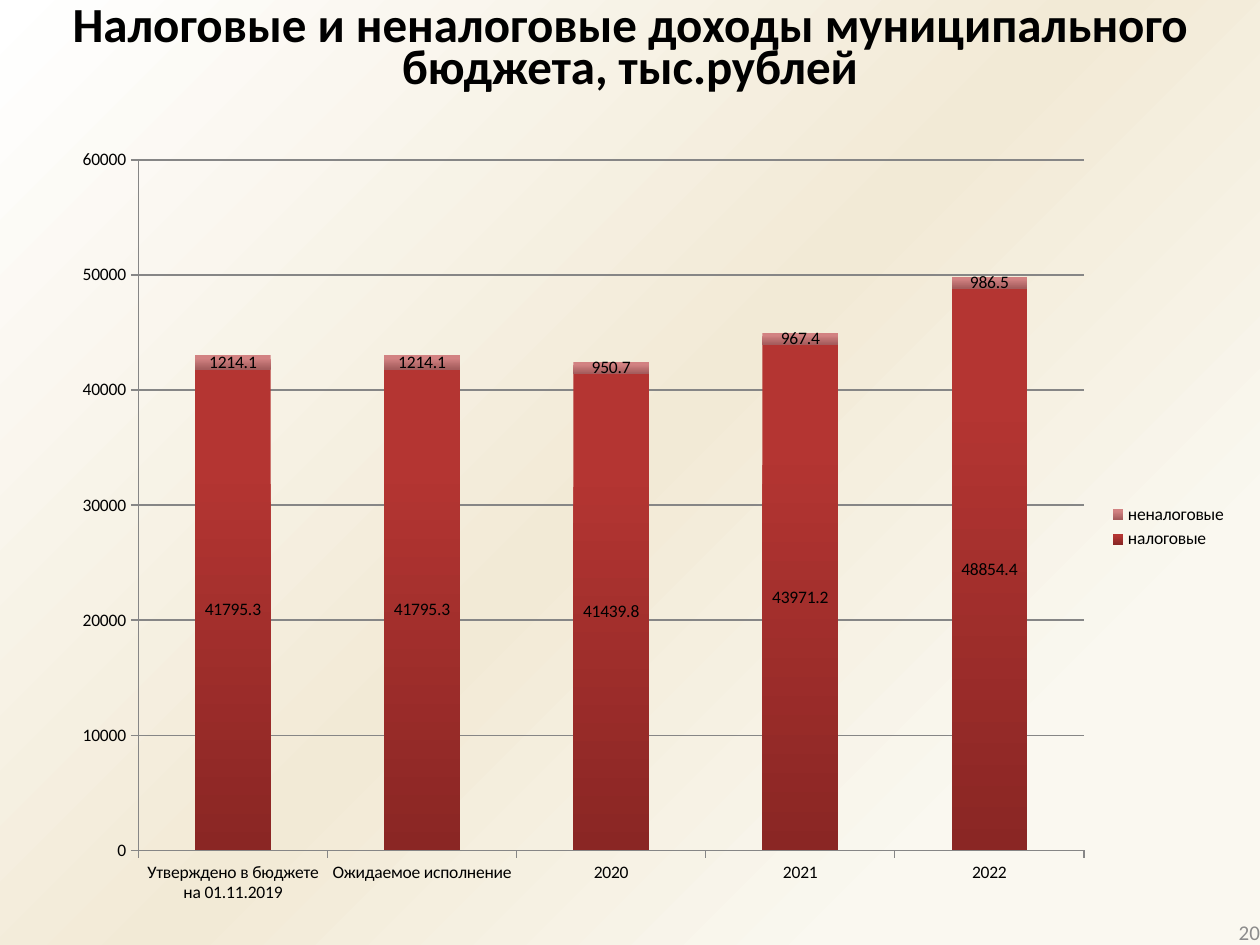
from pptx import Presentation, util as u
from pptx.chart.data import CategoryChartData
from pptx.dml.color import RGBColor
from pptx.enum import chart as ec, text as et
from pptx.oxml import parse_xml
from pptx.oxml.ns import nsdecls, qn

Inches, Pt = u.Inches, u.Pt
BLACK = RGBColor(0, 0, 0)
GREY = RGBColor(0x8C, 0x8C, 0x8C)
AXIS = RGBColor(0x86, 0x86, 0x86)
RED, DARK_RED = RGBColor(0xB4, 0x35, 0x32), RGBColor(0x8A, 0x26, 0x24)
PINK, DARK_PINK = RGBColor(0xD2, 0x82, 0x82), RGBColor(0xA4, 0x5C, 0x5C)
BACKDROP = [(19, RGBColor(0xFA, 0xF8, 0xF0)), (50, RGBColor(0xF2, 0xEA, 0xD6)),
            (100, RGBColor(0xFF, 0xFF, 0xFF))]

YEARS = ["Утверждено в бюджете на 01.11.2019", "Ожидаемое исполнение", "2020", "2021", "2022"]
INCOME = [
    ("налоговые", [41795.3, 41795.3, 41439.8, 43971.2, 48854.4], RED, DARK_RED),
    ("неналоговые", [1214.1, 1214.1, 950.7, 967.4, 986.5], PINK, DARK_PINK),
]
TEXTS = [
    dict(text="Налоговые и неналоговые доходы муниципального бюджета, тыс.рублей",
         at=(0, 0, 10, 0.8), insets=(0.1, 0.08, 0.1, 0.05), anchor=et.MSO_ANCHOR.TOP,
         para=dict(alignment=et.PP_ALIGN.CENTER, line_spacing=Pt(24)),
         size=28, bold=True, color=BLACK),
    dict(text="20", at=(7.67, 7.29, 2.33, 0.21), insets=(0, 0, 0, 0),
         anchor=et.MSO_ANCHOR.MIDDLE, para=dict(alignment=et.PP_ALIGN.RIGHT),
         size=12, bold=False, color=GREY),
]
PLOT = dict(x=0.067, y=0.032, w=0.801, h=0.881)


def assign(target, **values):
    for name, value in values.items():
        setattr(target, name, value)


def style_font(font, size, color, bold=False):
    assign(font, name="Calibri", size=Pt(size), bold=bold)
    font.color.rgb = color


def paint_background(page):
    fill = page.background.fill
    fill.gradient()
    stops = "".join(f'<a:gs pos="{pos * 1000}"><a:srgbClr val="{color}"/></a:gs>'
                    for pos, color in BACKDROP)
    gradient = parse_xml(
        f'<a:gradFill {nsdecls("a")} rotWithShape="1"><a:gsLst>{stops}</a:gsLst>'
        '<a:path path="circle"><a:fillToRect l="100000" t="100000"/></a:path></a:gradFill>')
    old = next(page.background._cSld.iter(qn("a:gradFill")))
    old.getparent().replace(old, gradient)


def add_text(page, item):
    box = page.shapes.add_textbox(*map(Inches, item["at"]))
    frame = box.text_frame
    left, top, right, bottom = map(Inches, item["insets"])
    assign(frame, word_wrap=True, vertical_anchor=item["anchor"], margin_left=left,
           margin_top=top, margin_right=right, margin_bottom=bottom)
    para = frame.paragraphs[0]
    assign(para, **item["para"])
    span = para.add_run()
    span.text = item["text"]
    style_font(span.font, item["size"], item["color"], item["bold"])


def add_income_chart(page):
    data = CategoryChartData(number_format="General")
    data.categories = YEARS
    for name, values, *_ in INCOME:
        data.add_series(name, values)
    chart = page.shapes.add_chart(ec.XL_CHART_TYPE.COLUMN_STACKED,
                                  *map(Inches, (0.47, 1.07, 9.37, 6.22)), data).chart
    assign(chart, has_title=False, has_legend=True)
    style_font(chart.font, 10, BLACK)
    assign(chart.legend, position=ec.XL_LEGEND_POSITION.RIGHT, include_in_layout=False)

    plot = chart.plots[0]
    assign(plot, gap_width=150, overlap=100, vary_by_categories=False)
    for series, (_, _, light, dark) in zip(plot.series, INCOME):
        fill = series.format.fill
        fill.gradient()
        fill.gradient_angle = 270
        for stop, position, color in zip(fill.gradient_stops, (0.2, 1), (light, dark)):
            stop.position = position
            stop.color.rgb = color
        series.format.line.fill.background()
        labels = series.data_labels
        assign(labels, show_value=True, position=ec.XL_LABEL_POSITION.CENTER)
        style_font(labels.font, 10, BLACK)

    values_axis = chart.value_axis
    assign(values_axis, minimum_scale=0, maximum_scale=60000, major_unit=10000,
           has_major_gridlines=True)
    for axis in (chart.category_axis, values_axis):
        axis.major_tick_mark = ec.XL_TICK_MARK.OUTSIDE
    for part in (chart.category_axis, values_axis, values_axis.major_gridlines):
        part.format.line.color.rgb = AXIS
        part.format.line.width = Pt(0.75)

    area = next(chart._chartSpace.iter(qn("c:plotArea")))
    for old in area.findall(qn("c:layout")):
        area.remove(old)
    places = "".join(f'<c:{key} val="{value}"/>' for key, value in PLOT.items())
    area.insert(0, parse_xml(
        f'<c:layout {nsdecls("c")}><c:manualLayout><c:layoutTarget val="inner"/>'
        f'<c:xMode val="edge"/><c:yMode val="edge"/>{places}</c:manualLayout></c:layout>'))


def main():
    deck = Presentation()
    assign(deck, slide_width=Inches(10), slide_height=Inches(7.5))
    page = deck.slides.add_slide(deck.slide_layouts[6])
    paint_background(page)
    for item in TEXTS:
        add_text(page, item)
    add_income_chart(page)
    deck.save("out.pptx")


if __name__ == "__main__":
    main()
